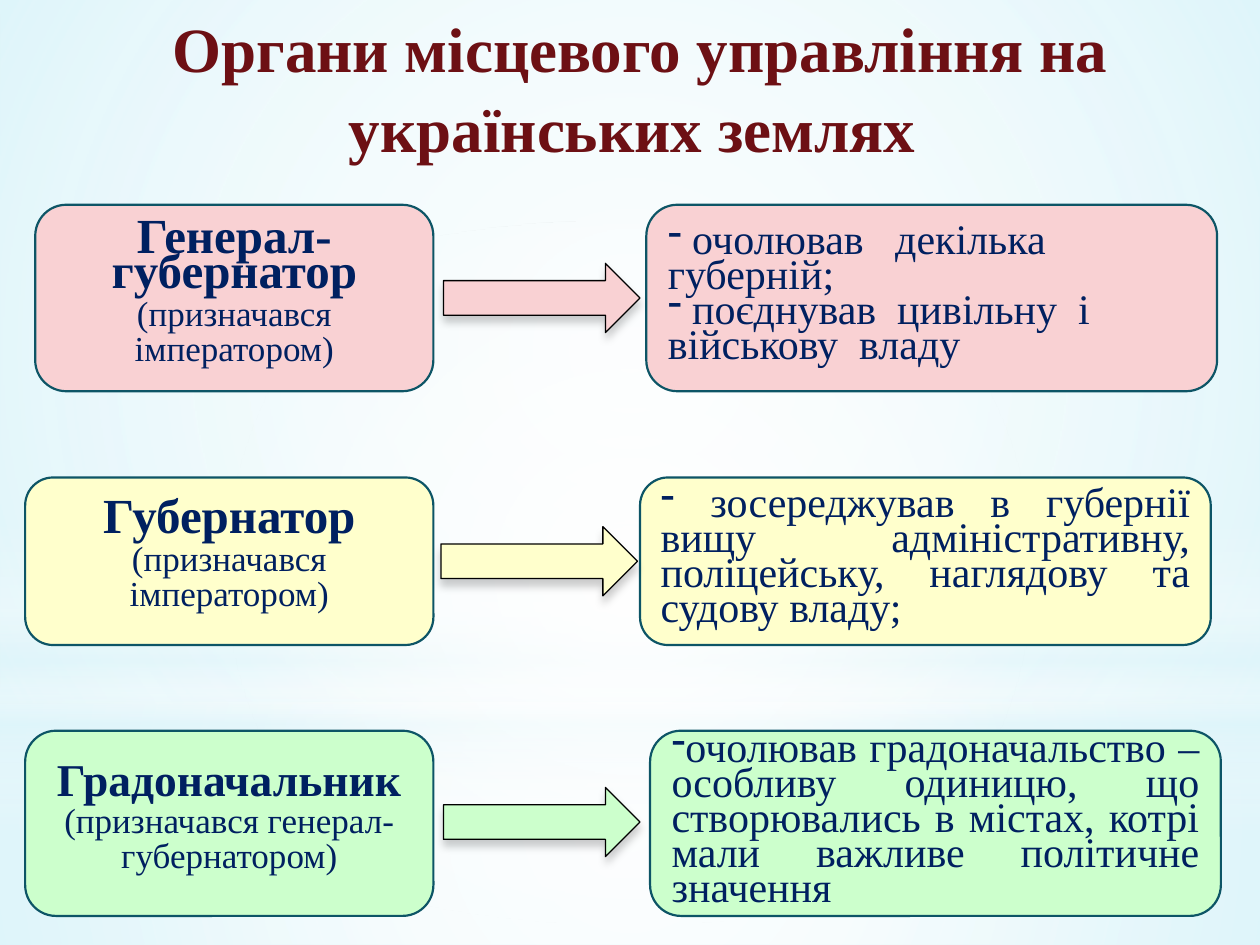
from dataclasses import dataclass
from typing import NamedTuple

from pptx import Presentation
from pptx.dml.color import RGBColor
from pptx.enum.shapes import MSO_SHAPE
from pptx.enum.text import MSO_ANCHOR, PP_ALIGN
from pptx.oxml import parse_xml
from pptx.oxml.ns import nsdecls, qn
from pptx.util import Inches, Pt


@dataclass(frozen=True)
class Theme:
    """Colours, font and type sizes of the slide."""
    font: str = "Times New Roman"
    sky: str = "DEF5FA"
    white: str = "FFFFFF"
    title: str = "6D1014"
    ink: str = "002060"
    border: str = "0D5566"
    black: str = "000000"
    title_size: int = 36
    duty_size: int = 24
    note_size: int = 20
    leading: int = 20


class Box(NamedTuple):
    """A rectangle in per cent of the slide's width and height."""
    x: float
    y: float
    w: float
    h: float


class Glow(NamedTuple):
    """A background layer: stops are position, colour and opacity in per cent."""
    shape: MSO_SHAPE
    box: Box
    stops: list
    radial: bool = True


class Office(NamedTuple):
    """One row: an office, its appointment and its duties."""
    name: str
    note: str
    duties: list
    fill: str
    size: int
    align: PP_ALIGN
    y: float
    h: float
    name_x: float
    duty_x: float
    arrow_x: float
    arrow_y: float


T = Theme()
WIDTH, HEIGHT = Inches(10), Inches(7.5)
NAME_RIGHT, DUTY_W, ARROW_W, ARROW_H = 34.4, 45.3, 15.6, 7.33

GLOWS = [
    Glow(MSO_SHAPE.RECTANGLE, Box(0, 74.4, 100, 25.6),
         [(0, T.white, 91), (37, T.white, 76), (100, T.sky, 79)]),
    Glow(MSO_SHAPE.RECTANGLE, Box(0, 0, 100, 74.4),
         [(0, T.white, 89), (48, T.white, 62), (100, T.sky, 79)]),
    Glow(MSO_SHAPE.RECTANGLE, Box(0, 54.93, 100, 33.33),
         [(0, T.white, 0), (29, T.white, 30), (45, T.sky, 40),
          (55, T.white, 26), (65, T.sky, 60), (100, T.white, 0)], radial=False),
    Glow(MSO_SHAPE.OVAL, Box(0, 23.33, 100, 74.4),
         [(0, T.white, 100), (56, T.white, 0)]),
]

OFFICES = [
    Office("Генерал-губернатор", "(призначався імператором)",
           [" очолював   декілька губерній;",
            " поєднував  цивільну  і військову  владу"],
           "F9D1D3", 28, PP_ALIGN.LEFT, 21.67, 19.73, 2.8, 51.3, 35.2, 27.87),
    Office("Губернатор", "(призначався імператором)",
           [" зосереджував в губернії вищу адміністративну, поліцейську, "
            "наглядову та судову владу;"],
           "FFFFCC", 28, PP_ALIGN.JUSTIFY, 50.53, 17.73, 2, 50.8, 35, 55.73),
    Office("Градоначальник", "(призначався генерал-губернатором)",
           ["очолював градоначальство – особливу одиницю, що створювались "
            "в містах, котрі мали важливе політичне значення"],
           "CCFFCC", 26, PP_ALIGN.JUSTIFY, 77.33, 19.6, 2, 51.6, 35.2, 83.33),
]


def place(box: Box) -> tuple:
    """Turn per cent of the slide into lengths."""
    return (int(WIDTH * box.x / 100), int(HEIGHT * box.y / 100),
            int(WIDTH * box.w / 100), int(HEIGHT * box.h / 100))


def add_text(p, text: str, *, size: int, color: str = T.ink, bold: bool = False,
             align=PP_ALIGN.CENTER, spacing=Pt(T.leading), bullet: str = "") -> None:
    """Write one formatted paragraph."""
    p.alignment, p.line_spacing = align, spacing
    if bullet:
        pPr = p._p.get_or_add_pPr()
        pPr.append(parse_xml(f'<a:buFontTx {nsdecls("a")}/>'))
        pPr.append(parse_xml(f'<a:buChar {nsdecls("a")} char="{bullet}"/>'))
    r = p.add_run()
    r.text = text
    r.font.name, r.font.size, r.font.bold = T.font, Pt(size), bold
    r.font.color.rgb = RGBColor.from_string(color)


def add_solid(s, shape: MSO_SHAPE, box: Box, fill: str, line: str, width: float):
    """Draw a filled and outlined shape."""
    sp = s.shapes.add_shape(shape, *place(box))
    sp.shadow.inherit = False
    sp.fill.solid()
    sp.fill.fore_color.rgb = RGBColor.from_string(fill)
    sp.line.color.rgb = RGBColor.from_string(line)
    sp.line.width = Pt(width)
    sp.text_frame.word_wrap = True
    sp.text_frame.vertical_anchor = MSO_ANCHOR.MIDDLE
    return sp


def add_glow(s, glow: Glow) -> None:
    """Draw a translucent gradient layer."""
    sp = s.shapes.add_shape(glow.shape, *place(glow.box))
    sp.shadow.inherit = False
    sp.line.fill.background()
    sp.fill.background()
    stops = "".join(
        f'<a:gs pos="{pos * 1000}"><a:srgbClr val="{color}">'
        f'<a:alpha val="{alpha * 1000}"/></a:srgbClr></a:gs>'
        for pos, color, alpha in glow.stops)
    course = ('<a:path path="circle"><a:fillToRect l="50000" t="50000" r="50000" '
              'b="50000"/></a:path>' if glow.radial else '<a:lin ang="5400000" scaled="0"/>')
    spPr = sp._element.spPr
    spPr.replace(spPr.find(qn("a:noFill")), parse_xml(
        f'<a:gradFill {nsdecls("a")} rotWithShape="1"><a:gsLst>{stops}</a:gsLst>'
        f'{course}</a:gradFill>'))


def add_arrow(s, box: Box, fill: str) -> None:
    """Draw a block arrow with a soft shadow below it."""
    sp = add_solid(s, MSO_SHAPE.RIGHT_ARROW, box, fill, T.black, 0.75)
    sp._element.spPr.find(qn("a:effectLst")).append(parse_xml(
        f'<a:outerShdw {nsdecls("a")} blurRad="{Pt(5)}" dist="{Pt(4)}" dir="5400000" '
        f'rotWithShape="0"><a:srgbClr val="{T.black}"><a:alpha val="20000"/>'
        f'</a:srgbClr></a:outerShdw>'))


def add_office(s, o: Office) -> None:
    """Draw the office, its duties and the arrow between them."""
    name_box = Box(o.name_x, o.y, NAME_RIGHT - o.name_x, o.h)
    tf = add_solid(s, MSO_SHAPE.ROUNDED_RECTANGLE, name_box, o.fill, T.border, 1.25).text_frame
    add_text(tf.paragraphs[0], o.name, size=o.size, bold=True)
    add_text(tf.add_paragraph(), o.note, size=T.note_size)
    duty_box = Box(o.duty_x, o.y, DUTY_W, o.h)
    tf = add_solid(s, MSO_SHAPE.ROUNDED_RECTANGLE, duty_box, o.fill, T.border, 1.25).text_frame
    for i, duty in enumerate(o.duties):
        p = tf.add_paragraph() if i else tf.paragraphs[0]
        add_text(p, duty, size=T.duty_size, align=o.align, bullet="-")
    add_arrow(s, Box(o.arrow_x, o.arrow_y, ARROW_W, ARROW_H), o.fill)


def main() -> None:
    """Build the slide and save it."""
    prs = Presentation()
    prs.slide_width, prs.slide_height = WIDTH, HEIGHT
    s = prs.slides.add_slide(prs.slide_layouts[6])
    s.background.fill.solid()
    s.background.fill.fore_color.rgb = RGBColor.from_string(T.sky)
    for glow in GLOWS:
        add_glow(s, glow)
    tf = s.shapes.add_textbox(*place(Box(3.3, 0, 95, 14.53))).text_frame
    tf.word_wrap = True
    add_text(tf.paragraphs[0], "Органи місцевого управління на українських землях ",
             size=T.title_size, color=T.title, bold=True, spacing=1.05)
    for office in OFFICES:
        add_office(s, office)
    prs.save("out.pptx")


if __name__ == "__main__":
    main()
